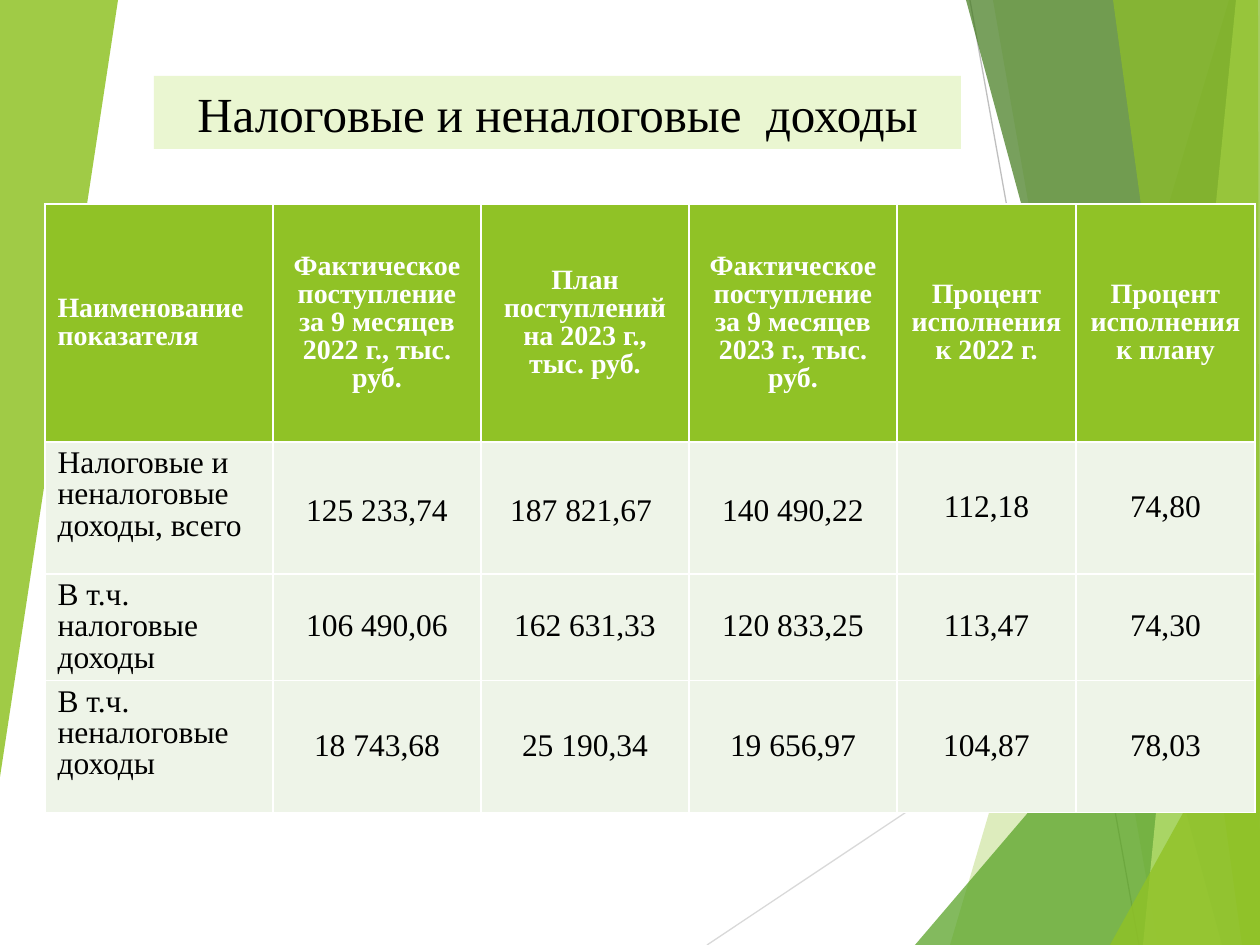
from dataclasses import dataclass

from lxml.etree import SubElement
from pptx import Presentation
from pptx.dml.color import RGBColor
from pptx.enum.shapes import MSO_CONNECTOR
from pptx.enum.text import MSO_ANCHOR, MSO_AUTO_SIZE, PP_ALIGN
from pptx.oxml.ns import qn
from pptx.util import Pt

SCALE = 914400 / 126
WIDE, HIGH = 1260, 945


@dataclass(frozen=True)
class Theme:
    font: str = "Times New Roman"
    lime: str = "90C226"
    green: str = "54A021"
    dark: str = "3F7819"
    light: str = "C0E474"
    band: str = "EAF6D1"
    pale: str = "EEF4E8"
    white: str = "FFFFFF"
    black: str = "000000"
    title: int = 28
    head: int = 16
    body: int = 18


def emu(px):
    return round(px * SCALE)


def paint(fill, color):
    fill.solid()
    fill.fore_color.rgb = RGBColor.from_string(color)


def write(frame, text, size, color, font, bold=False, align=PP_ALIGN.CENTER,
          space=0.9, before=0):
    frame.word_wrap = True
    para = frame.paragraphs[0]
    para.alignment = align
    para.line_spacing = space
    para.space_before = Pt(before)
    run = para.add_run()
    run.text = text
    run.font.name = font
    run.font.size = Pt(size)
    run.font.bold = bold
    run.font.color.rgb = RGBColor.from_string(color)


def edge(cell, color):
    """Draw a 1 pt line on all four sides of a cell."""
    props = cell._tc.get_or_add_tcPr()
    for side in ("a:lnL", "a:lnR", "a:lnT", "a:lnB"):
        line = SubElement(props, qn(side), w=str(Pt(1)))
        fill = SubElement(line, qn("a:solidFill"))
        SubElement(fill, qn("a:srgbClr"), val=color)


class Page:
    def __init__(self, slide, theme):
        self.slide = slide
        self.shapes = slide.shapes
        self.theme = theme

    def line(self, start, end, color):
        ends = [emu(px) for px in (*start, *end)]
        line = self.shapes.add_connector(MSO_CONNECTOR.STRAIGHT, *ends)
        line.line.color.rgb = RGBColor.from_string(color)
        line.line.width = Pt(0.75)
        SubElement(line.element.spPr, qn("a:effectLst"))

    def facet(self, points, color, alpha):
        """Add a borderless polygon; alpha is its opacity in percent."""
        path = self.shapes.build_freeform(*points[0], scale=SCALE)
        path.add_line_segments(points[1:], close=True)
        shape = path.convert_to_shape()
        shape.shadow.inherit = False
        shape.line.fill.background()
        paint(shape.fill, color)
        tone = shape.element.spPr.find(".//" + qn("a:srgbClr"))
        SubElement(tone, qn("a:alpha"), val=str(alpha * 1000))

    def title(self, text, left, top, width, height):
        look = self.theme
        box = self.shapes.title
        box.left, box.top = emu(left), emu(top)
        box.width, box.height = emu(width), emu(height)
        paint(box.fill, look.band)
        frame = box.text_frame
        frame.auto_size = MSO_AUTO_SIZE.NONE
        frame.vertical_anchor = MSO_ANCHOR.MIDDLE
        write(frame, text, look.title, look.black, look.font, space=1.0, before=10)
        tree = box.element.getparent()
        tree.append(box.element)  # in front of the facets

    def table(self, rows, left, top, widths, heights):
        look = self.theme
        grid = self.shapes.add_table(
            len(rows), len(widths), emu(left), emu(top),
            emu(sum(widths)), emu(sum(heights))).table
        grid.horz_banding = False
        for col, width in zip(grid.columns, widths):
            col.width = emu(width)
        for row, height in zip(grid.rows, heights):
            row.height = emu(height)
        for r, row in enumerate(rows):
            for c, text in enumerate(row):
                cell = grid.cell(r, c)
                head, name = r == 0, c == 0
                edge(cell, look.white)
                paint(cell.fill, look.lime if head else look.pale)
                top_set = name and not head
                cell.vertical_anchor = MSO_ANCHOR.TOP if top_set else MSO_ANCHOR.MIDDLE
                write(cell.text_frame, text,
                      look.head if head else look.body,
                      look.white if head else look.black,
                      look.font, bold=head,
                      align=PP_ALIGN.LEFT if name else PP_ALIGN.CENTER,
                      space=1.15 if r == 1 and 1 <= c <= 3 else 0.9)


ROWS = [
    ["Наименование показателя",
     "Фактическое поступление за 9 месяцев 2022 г., тыс. руб.",
     "План поступлений на 2023 г., тыс. руб.",
     "Фактическое поступление за 9 месяцев 2023 г., тыс. руб.",
     "Процент исполнения к 2022 г.",
     "Процент исполнения к плану"],
    ["Налоговые и неналоговые доходы, всего",
     "125 233,74", "187 821,67 ", "140 490,22", "112,18", "74,80"],
    ["В т.ч. налоговые доходы",
     "106 490,06", "162 631,33", "120 833,25", "113,47", "74,30"],
    ["В т.ч. неналоговые доходы",
     "18 743,68", "25 190,34", "19 656,97", "104,87", "78,03"],
]


def decor(page):
    look = page.theme
    page.line((707, HIGH), (WIDE, 576), "D9D9D9")
    page.line((970, 0), (1139, HIGH), "BFBFBF")
    # Top x, bottom x, right edge at the top, colour, opacity
    for top, foot, right, color, alpha in (
            (1229, 950, WIDE, look.lime, 30),
            (993, 1158, WIDE, look.lime, 20)):
        page.facet([(top, 0), (foot, HIGH), (WIDE, HIGH), (right, 0)], color, alpha)
    page.facet([(915, HIGH), (WIDE, 541), (WIDE, HIGH)], look.green, 72)
    for top, foot, right, color, alpha in (
            (966, 1222, WIDE, look.dark, 70),
            (1236, 1143, WIDE, look.light, 70),
            (1113, 1242, 1258, look.lime, 65)):
        page.facet([(top, 0), (foot, HIGH), (WIDE, HIGH), (right, 0)], color, alpha)
    page.facet([(1110, HIGH), (WIDE, 674), (WIDE, HIGH)], look.lime, 80)
    page.facet([(0, 0), (118, 0), (0, 777)], look.lime, 85)


def main():
    deck = Presentation()
    deck.slide_width, deck.slide_height = emu(WIDE), emu(HIGH)
    page = Page(deck.slides.add_slide(deck.slide_layouts[5]), Theme())
    decor(page)
    page.title("Налоговые и неналоговые  доходы", 154, 76, 807, 73)
    page.table(ROWS, 45, 204, [228] + [208] * 3 + [179] * 2, [238, 132, 93, 132])
    deck.save("out.pptx")


if __name__ == "__main__":
    main()
